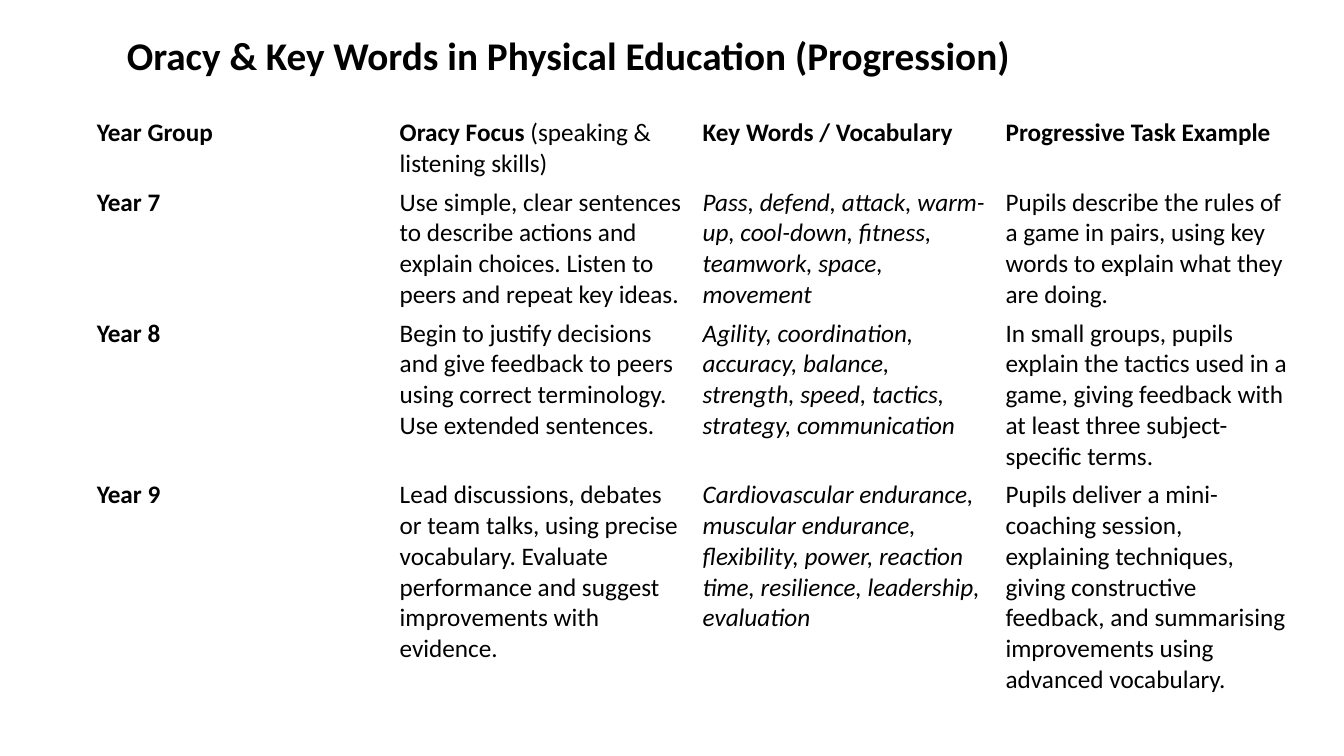
from pptx import Presentation
from pptx import util as u
from pptx.dml.color import RGBColor
from pptx.enum import text

BLACK = RGBColor(0x00, 0x00, 0x00)
WIDTH, HEIGHT = 13.33, 7.5

# Each cell is a list of (words, style); style holds "b" for bold, "i" for italic
HEADER = [
    [("Year Group", "b")],
    [("Oracy Focus", "b"), (" (speaking & listening skills)", "")],
    [("Key Words / Vocabulary", "b")],
    [("Progressive Task Example", "b")],
]
YEAR_STYLES = ["b", "", "i", ""]
YEARS = [
    ("Year 7",
     "Use simple, clear sentences to describe actions and explain choices. "
     "Listen to peers and repeat key ideas.",
     "Pass, defend, attack, warm-up, cool-down, fitness, teamwork, space, movement",
     "Pupils describe the rules of a game in pairs, using key words to explain "
     "what they are doing."),
    ("Year 8",
     "Begin to justify decisions and give feedback to peers using correct "
     "terminology. Use extended sentences.",
     "Agility, coordination, accuracy, balance, strength, speed, tactics, "
     "strategy, communication",
     "In small groups, pupils explain the tactics used in a game, giving feedback "
     "with at least three subject-specific terms."),
    ("Year 9",
     "Lead discussions, debates or team talks, using precise vocabulary. "
     "Evaluate performance and suggest improvements with evidence.",
     "Cardiovascular endurance, muscular endurance, flexibility, power, reaction "
     "time, resilience, leadership, evaluation",
     "Pupils deliver a mini-coaching session, explaining techniques, giving "
     "constructive feedback, and summarising improvements using advanced vocabulary."),
]
ROW_LINES = [2, 4, 5, 7]


class Page:
    """Style and current slide; positions are shares of the slide's size."""
    font, color = "Calibri", BLACK
    line, pad_x, pad_y = 0.305, 0.1, 0.04

    def __init__(self, prs):
        self.slide = prs.slides.add_slide(prs.slide_layouts[6])

    def box(self, x, y, w, h):
        return [u.Inches(v) for v in (x * WIDTH, y * HEIGHT, w * WIDTH, h * HEIGHT)]

    def add_runs(self, p, runs, size):
        for words, style in runs:
            r = p.add_run()
            r.text = words
            r.font.name, r.font.size = self.font, u.Pt(size)
            r.font.bold, r.font.italic = "b" in style, "i" in style
            r.font.color.rgb = self.color

    def title(self, words, x, y, w, h):
        tf = self.slide.shapes.add_textbox(*self.box(x, y, w, h)).text_frame
        tf.word_wrap = True
        self.add_runs(tf.paragraphs[0], [(words, "b")], 28)

    def table(self, rows, lines, x, y, w):
        heights = [n * self.line + 2 * self.pad_y for n in lines]
        frame = self.slide.shapes.add_table(
            len(rows), len(rows[0]), *self.box(x, y, w, sum(heights) / HEIGHT))
        table = frame.table
        table.first_row = table.horz_banding = False
        for i, row in enumerate(rows):
            table.rows[i].height = u.Inches(heights[i])
            for j, runs in enumerate(row):
                self.cell(table.cell(i, j), runs)

    def cell(self, cell, runs):
        cell.fill.background()
        cell.margin_left = cell.margin_right = u.Inches(self.pad_x)
        cell.margin_top = cell.margin_bottom = u.Inches(self.pad_y)
        cell.vertical_anchor = text.MSO_ANCHOR.TOP
        self.add_runs(cell.text_frame.paragraphs[0], runs, 18)


def main():
    prs = Presentation()
    prs.slide_width, prs.slide_height = u.Inches(WIDTH), u.Inches(HEIGHT)
    page = Page(prs)

    # Progression table
    years = [[[pair] for pair in zip(year, YEAR_STYLES)] for year in YEARS]
    page.table([HEADER] + years, ROW_LINES, 0.86 / WIDTH, 0.15, 12.02 / WIDTH)

    # Title
    page.title("Oracy & Key Words in Physical Education (Progression)",
               1.16 / WIDTH, 0.26 / HEIGHT, 9.71 / WIDTH, 0.88 / HEIGHT)

    prs.save("out.pptx")


if __name__ == "__main__":
    main()
